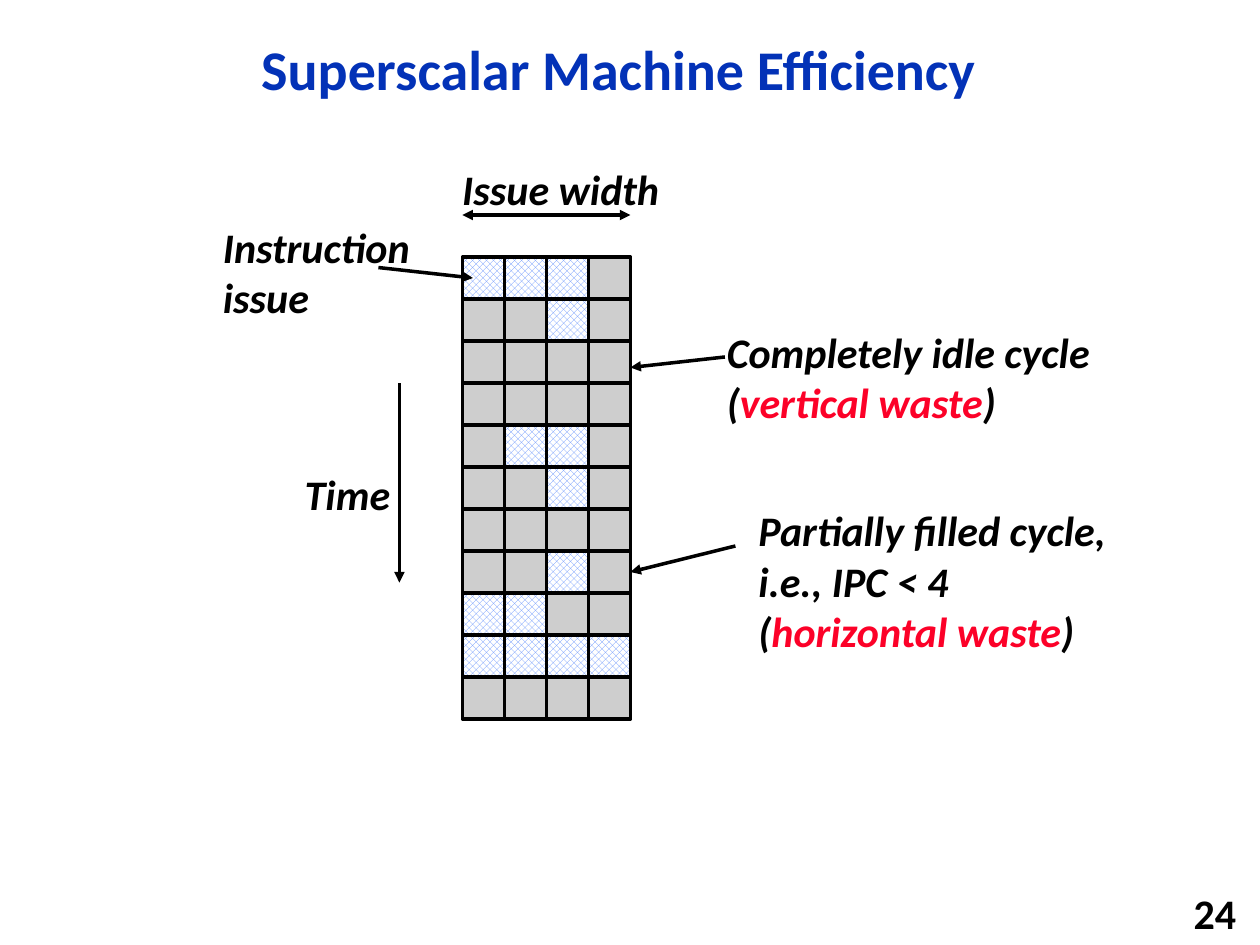
from dataclasses import dataclass

from lxml import etree
from pptx import Presentation
from pptx import util as u
from pptx.dml.color import RGBColor
from pptx.enum import dml, shapes, text
from pptx.oxml.ns import qn


@dataclass(frozen=True)
class Theme:
    font: str = "Calibri"
    title_size: int = 32
    body_size: int = 24
    line_width: int = 2
    title: str = "0332B7"
    ink: str = "000000"
    waste: str = "FC0128"
    idle: str = "CECECE"
    issued: str = "618FFD"
    paper: str = "FFFFFF"


@dataclass(frozen=True)
class Grid:
    """Issue slots; positions are columns and rows from the top left slot."""
    left: float = 3.67
    top: float = 2.04
    cell: float = 1 / 3

    def x(self, column: float) -> u.Length:
        return u.Inches(self.left + column * self.cell)

    def y(self, row: float) -> u.Length:
        return u.Inches(self.top + row * self.cell)

    def span(self, cells: float) -> u.Length:
        return u.Inches(cells * self.cell)


@dataclass(frozen=True)
class Label:
    column: float
    row: float
    columns: float
    rows: float
    paragraphs: list  # each paragraph is a list of (words, colour)
    wrap: bool = True


@dataclass(frozen=True)
class Arrow:
    start: tuple
    end: tuple
    ends: tuple = ("headEnd",)


THEME = Theme()
GRID = Grid()

# One string per cycle, "#" for an issued instruction
CYCLES = ["###.", "..#.", "....", "....", ".##.", "..#.",
          "....", "..#.", "##..", "####", "...."]

LABELS = [
    Label(-0.3, -2.38, 5.58, 1.53, [[("Issue width", THEME.ink)]], wrap=False),
    Label(-4.05, 4.88, 2.91, 1.53, [[("Time", THEME.ink)]], wrap=False),
    Label(6, 1.5, 12, 2.73, [[("Completely idle cycle (", THEME.ink),
                              ("vertical waste", THEME.waste), (")", THEME.ink)]]),
    Label(-6, -1, 5.55, 2.73, [[("Instruction issue", THEME.ink)]]),
    Label(6.75, 5.75, 10.25, 3.93, [
        [("Partially filled cycle, i.e., IPC < 4", THEME.ink)],
        [("(", THEME.ink), ("horizontal waste", THEME.waste), (")", THEME.ink)]]),
]

ARROWS = [
    Arrow((0, -1), (4, -1), ("headEnd", "tailEnd")),  # issue width
    Arrow((-1.5, 3), (-1.5, 7.75), ("tailEnd",)),     # time
    Arrow((4, 2.63), (6.25, 2.38)),                   # idle cycle
    Arrow((0.25, 0.5), (-2, 0.25)),                   # instruction issue
    Arrow((4, 7.5), (6.5, 6.88)),                     # partially filled cycle
]


def colour(value: str) -> RGBColor:
    return RGBColor.from_string(value)


def set_font(font, size: int, value: str, italic: bool = False) -> None:
    font.name, font.size = THEME.font, u.Pt(size)
    font.bold, font.italic = True, italic
    font.color.rgb = colour(value)


def draw_title(deck, page, words: str) -> None:
    box = page.shapes.title
    box.left, box.top = int(deck.slide_width * 0.092), int(deck.slide_height * 0.023)
    box.width, box.height = int(deck.slide_width * 0.798), int(deck.slide_height * 0.108)
    frame = box.text_frame
    frame.text = words
    frame.vertical_anchor = text.MSO_ANCHOR.MIDDLE
    para = frame.paragraphs[0]
    para.alignment, para.line_spacing = text.PP_ALIGN.CENTER, 0.9
    set_font(para.font, THEME.title_size, THEME.title)


def draw_page_number(page, number: str) -> None:
    box = page.shapes.add_textbox(u.Inches(7.83), u.Inches(7.08),
                                  u.Inches(2.08), u.Inches(0.32))
    frame = box.text_frame
    frame.text, frame.word_wrap = number, False
    frame.vertical_anchor = text.MSO_ANCHOR.MIDDLE
    para = frame.paragraphs[0]
    para.alignment = text.PP_ALIGN.RIGHT
    set_font(para.font, THEME.body_size, THEME.ink)


def draw_slot(page, column: int, row: int, issued: bool) -> None:
    slot = page.shapes.add_shape(shapes.MSO_SHAPE.RECTANGLE, GRID.x(column),
                                 GRID.y(row), GRID.span(1), GRID.span(1))
    slot.shadow.inherit = False
    if issued:
        slot.fill.patterned()
        slot.fill.pattern = dml.MSO_PATTERN.SOLID_DIAMOND
        slot.fill.fore_color.rgb = colour(THEME.issued)
        slot.fill.back_color.rgb = colour(THEME.paper)
    else:
        slot.fill.solid()
        slot.fill.fore_color.rgb = colour(THEME.idle)
    slot.line.color.rgb = colour(THEME.ink)
    slot.line.width = u.Pt(THEME.line_width)


def draw_label(page, label: Label) -> None:
    box = page.shapes.add_textbox(GRID.x(label.column), GRID.y(label.row),
                                  GRID.span(label.columns), GRID.span(label.rows))
    frame = box.text_frame
    frame.word_wrap = label.wrap
    frame.auto_size = text.MSO_AUTO_SIZE.SHAPE_TO_FIT_TEXT
    for index, pieces in enumerate(label.paragraphs):
        para = frame.add_paragraph() if index else frame.paragraphs[0]
        set_font(para.font, THEME.body_size, THEME.ink, italic=True)
        for words, value in pieces:
            span = para.add_run()
            span.text = words
            span.font.color.rgb = colour(value)


def draw_arrow(page, arrow: Arrow) -> None:
    (x1, y1), (x2, y2) = arrow.start, arrow.end
    line = page.shapes.add_connector(shapes.MSO_CONNECTOR.STRAIGHT, GRID.x(x1),
                                     GRID.y(y1), GRID.x(x2), GRID.y(y2))
    line.line.color.rgb = colour(THEME.ink)
    line.line.width = u.Pt(THEME.line_width)
    properties = line.line._get_or_add_ln()
    for end in arrow.ends:
        etree.SubElement(properties, qn(f"a:{end}"), type="triangle")
    etree.SubElement(properties.getparent(), qn("a:effectLst"))


def main() -> None:
    deck = Presentation()
    deck.slide_width, deck.slide_height = u.Inches(10), u.Inches(7.5)
    page = deck.slides.add_slide(deck.slide_layouts.get_by_name("Title Only"))

    # Title and page number
    draw_title(deck, page, "Superscalar Machine Efficiency")
    draw_page_number(page, "24")

    # Issue slots, one row per cycle
    for row, cycle in enumerate(CYCLES):
        for column, mark in enumerate(cycle):
            draw_slot(page, column, row, issued=mark == "#")

    # Arrows and labels
    for arrow in ARROWS:
        draw_arrow(page, arrow)
    for label in LABELS:
        draw_label(page, label)

    deck.save("out.pptx")


if __name__ == "__main__":
    main()
